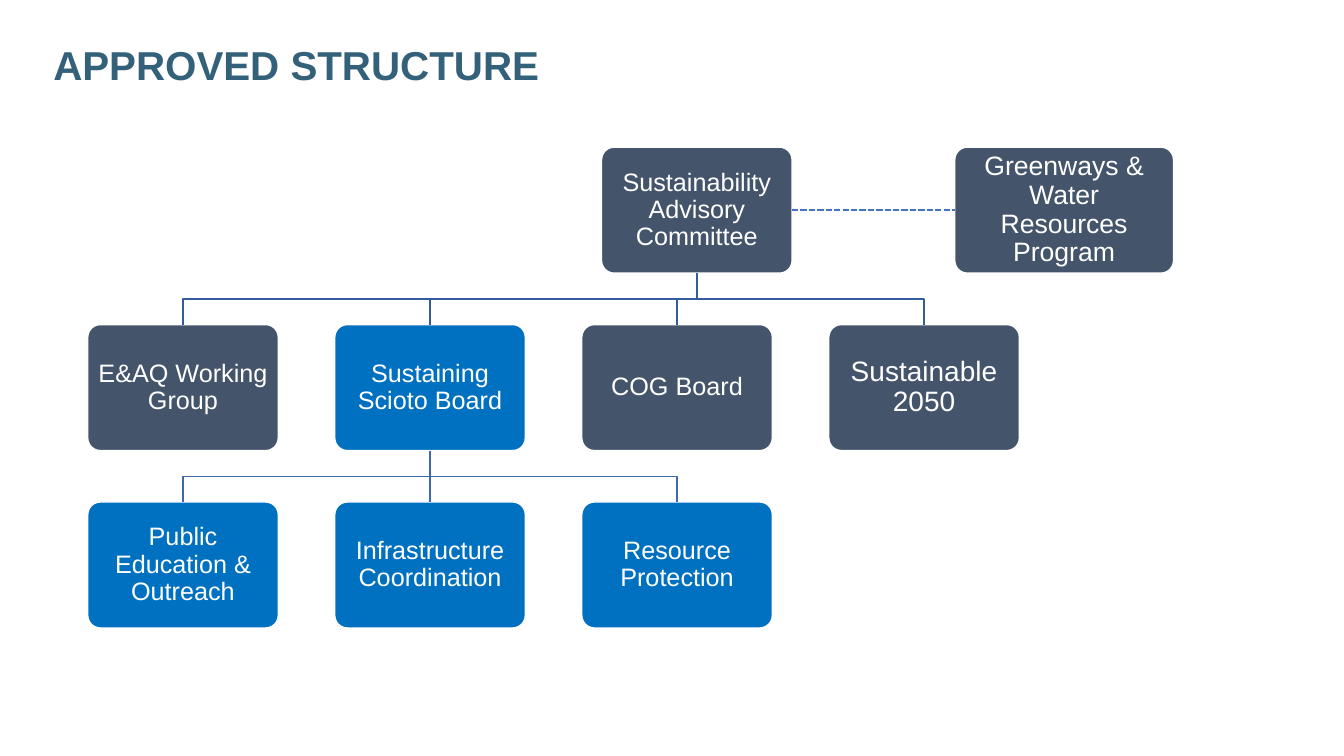
import pptx
import pptx.util
import pptx.dml.color
import pptx.enum.dml
import pptx.enum.shapes
import pptx.enum.text
import lxml.etree

Inches, Pt = pptx.util.Inches, pptx.util.Pt
PP = pptx.enum.text.PP_ALIGN
SHAPE = pptx.enum.shapes.MSO_SHAPE
STRAIGHT = pptx.enum.shapes.MSO_CONNECTOR.STRAIGHT
SLATE, BLUE = "44546A", "0070C0"
LEFT, TOP = 0.87, 1.46
COL, ROW = 2.45, 1.76
BOX_W, BOX_H = 1.89, 1.25


def rgb(value):
    return pptx.dml.color.RGBColor.from_string(value)


def write(sp, text, size=18, color="FFFFFF", bold=False, align=PP.CENTER, inset=(0.07, 0.07)):
    tf = sp.text_frame
    tf.word_wrap = True
    tf.vertical_anchor = pptx.enum.text.MSO_ANCHOR.MIDDLE
    tf.margin_left = tf.margin_right = Inches(inset[0])
    tf.margin_top = tf.margin_bottom = Inches(inset[1])
    p = tf.paragraphs[0]
    p.alignment = align
    p.line_spacing = 0.9
    r = p.add_run()
    r.text = text
    r.font.name, r.font.size, r.font.bold = "Arial", Pt(size), bold
    r.font.color.rgb = rgb(color)


prs = pptx.Presentation()
prs.slide_width, prs.slide_height = Inches(13.33), Inches(7.5)
s = prs.slides.add_slide(prs.slide_layouts[6])

title = s.shapes.add_textbox(Inches(0.43), Inches(0.4), Inches(12.09), Inches(0.53))
write(title, "APPROVED STRUCTURE", size=28.8, color="34617A", bold=True,
      align=PP.LEFT, inset=(0.1, 0.05))

# name: column, row, width, fill, text size
boxes = {
    "Sustainability Advisory Committee": (2.08, 0, BOX_W, SLATE, 18),
    "E&AQ Working Group": (0, 1, BOX_W, SLATE, 18),
    "Sustaining Scioto Board": (1, 1, BOX_W, BLUE, 18),
    "COG Board": (2, 1, BOX_W, SLATE, 18),
    "Sustainable 2050": (3, 1, BOX_W, SLATE, 20),
    "Public Education & Outreach": (0, 2, BOX_W, BLUE, 18),
    "Infrastructure Coordination": (1, 2, BOX_W, BLUE, 18),
    "Resource Protection": (2, 2, BOX_W, BLUE, 18),
    "Greenways & Water Resources Program": (3.51, 0, 2.17, SLATE, 19),
}
placed = {}
for name, (col, row, width, fill, size) in boxes.items():
    sp = s.shapes.add_shape(SHAPE.ROUNDED_RECTANGLE, Inches(LEFT + col * COL),
                            Inches(TOP + row * ROW), Inches(width), Inches(BOX_H))
    sp.adjustments[0] = 0.1
    sp.shadow.inherit = False
    sp.fill.solid()
    sp.fill.fore_color.rgb = rgb(fill)
    sp.line.color.rgb = rgb("FFFFFF")
    sp.line.width = Pt(1)
    write(sp, name, size=size, inset=(0.07, 0.07) if size == 18 else (0.09, 0.09))
    placed[name] = sp

committee, eaq, scioto, cog, s2050, education, infrastructure, resource, greenways = placed.values()

# Branches that step sideways halfway between two rows
for parent, children, color in [(committee, (eaq, scioto, cog, s2050), "365B9D"),
                                (scioto, (education, resource), "3E67B2")]:
    x = parent.left + parent.width // 2
    y = parent.top + parent.height
    for child in children:
        child_x = child.left + child.width // 2
        middle = (y + child.top) // 2
        fb = s.shapes.build_freeform(x, y)
        fb.add_line_segments([(x, middle), (child_x, middle), (child_x, child.top)], close=False)
        branch = fb.convert_to_shape()
        branch.shadow.inherit = False
        branch.fill.background()
        branch.line.color.rgb = rgb(color)
        branch.line.width = Pt(1)

# Straight links, joined at the middles of box sides
for start, side, end, end_side, color, width, dash in [
        (scioto, 2, infrastructure, 0, "3E67B2", 1, None),
        (committee, 3, greenways, 1, "4472C4", 1.5, pptx.enum.dml.MSO_LINE.SQUARE_DOT)]:
    link = s.shapes.add_connector(STRAIGHT, 0, 0, 0, 0)
    link.begin_connect(start, side)
    link.end_connect(end, end_side)
    link.line.color.rgb = rgb(color)
    link.line.width = Pt(width)
    if dash:
        link.line.dash_style = dash
    lxml.etree.SubElement(link._element.spPr, pptx.oxml.ns.qn("a:effectLst"))

prs.save("out.pptx")
